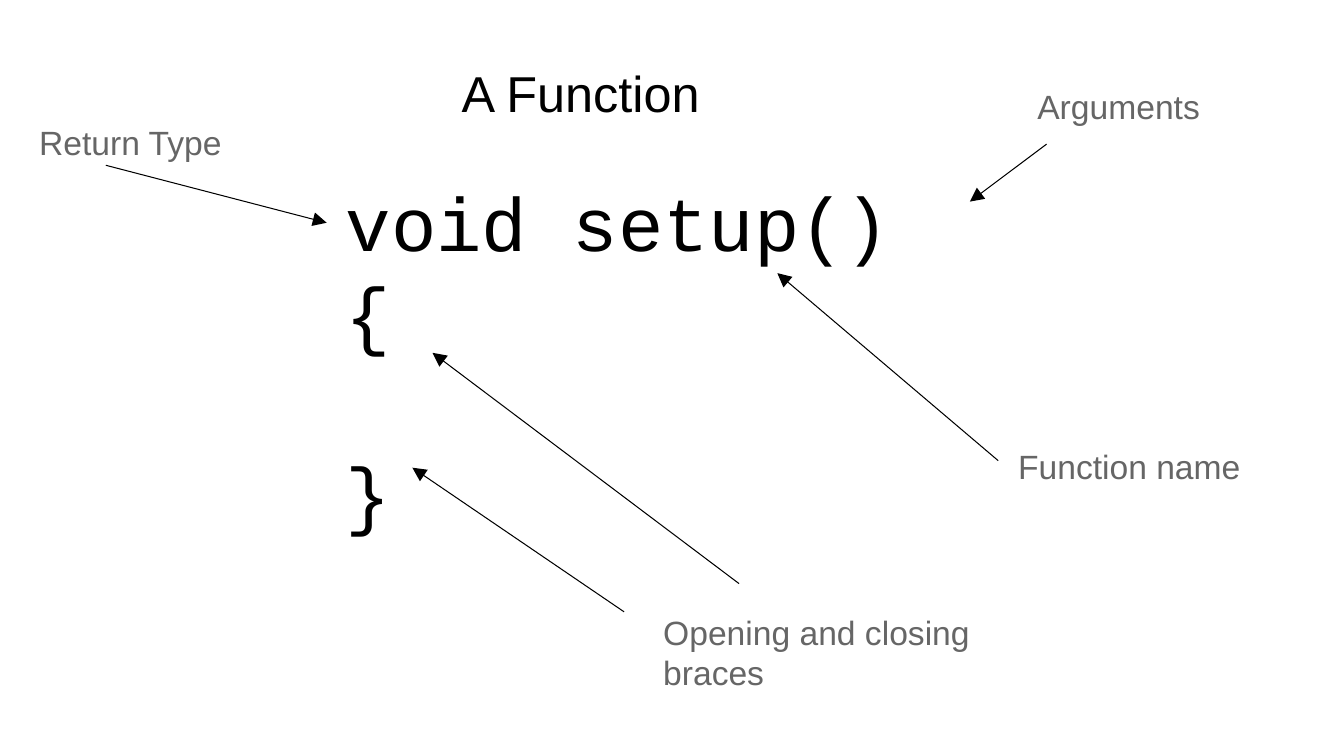
"""Build a slide that labels the parts of a function."""
from pptx import Presentation
from pptx import util as u
from pptx.dml.color import RGBColor
from pptx.enum import shapes
from pptx.oxml.ns import qn
from lxml import etree

LINE_RATIO = 1.19


def color(hex_string):
    return RGBColor.from_string(hex_string)


def add_text(slide, box, words, size, font, ink, insets):
    shape = slide.shapes.add_textbox(*[u.Inches(value) for value in box])
    frame = shape.text_frame
    frame.word_wrap = True
    frame.margin_left = frame.margin_right = u.Inches(insets[0])
    frame.margin_top = frame.margin_bottom = u.Inches(insets[1])
    frame.text = words
    for paragraph in frame.paragraphs:
        paragraph.line_spacing = u.Pt(size * LINE_RATIO)
        for run in paragraph.runs:
            run.font.size = u.Pt(size)
            run.font.name = font
            run.font.color.rgb = color(ink)
    return frame


presentation = Presentation()
presentation.slide_width = u.Inches(13.33)
presentation.slide_height = u.Inches(7.5)
slide = presentation.slides.add_slide(presentation.slide_layouts[6])

code = add_text(slide, (3.43, 1.75, 8.67, 3.6), "void setup()\n{\n}",
                54, "Courier New", "000000", (0, 0))
code.paragraphs[-1].space_before = u.Pt(54 * LINE_RATIO)

labels = [
    ("Return Type", (0.29, 1.14, 3.43, 0.5)),
    ("Function name", (10, 4.36, 2.9, 0.43)),
    ("Arguments", (10.19, 0.79, 2.48, 0.43)),
    ("Opening and closing braces", (6.48, 6, 3.43, 0.93)),
]
for words, box in labels:
    add_text(slide, box, words, 24, "Arial", "666666", (0.1, 0.07))

arrows = [
    (1.05, 1.64, 3.24, 2.21),
    (7.33, 5.79, 4.29, 3.5),
    (6.19, 6.07, 4.09, 4.64),
    (10.38, 1.43, 9.62, 2),
    (9.9, 4.57, 7.71, 2.71),
]
for ends in arrows:
    arrow = slide.shapes.add_connector(
        shapes.MSO_CONNECTOR.STRAIGHT, *[u.Inches(value) for value in ends])
    arrow.line.color.rgb = color("000000")
    arrow.line.width = u.Pt(0.75)
    etree.SubElement(arrow.line._get_or_add_ln(), qn("a:tailEnd"),
                     type="triangle", w="lg", len="lg")
    etree.SubElement(arrow._element.spPr, qn("a:effectLst"))

add_text(slide, (4.48, 0.55, 7.81, 0.6), "A Function",
         36, "Arial", "000000", (0.1, 0.07))

presentation.save("out.pptx")
